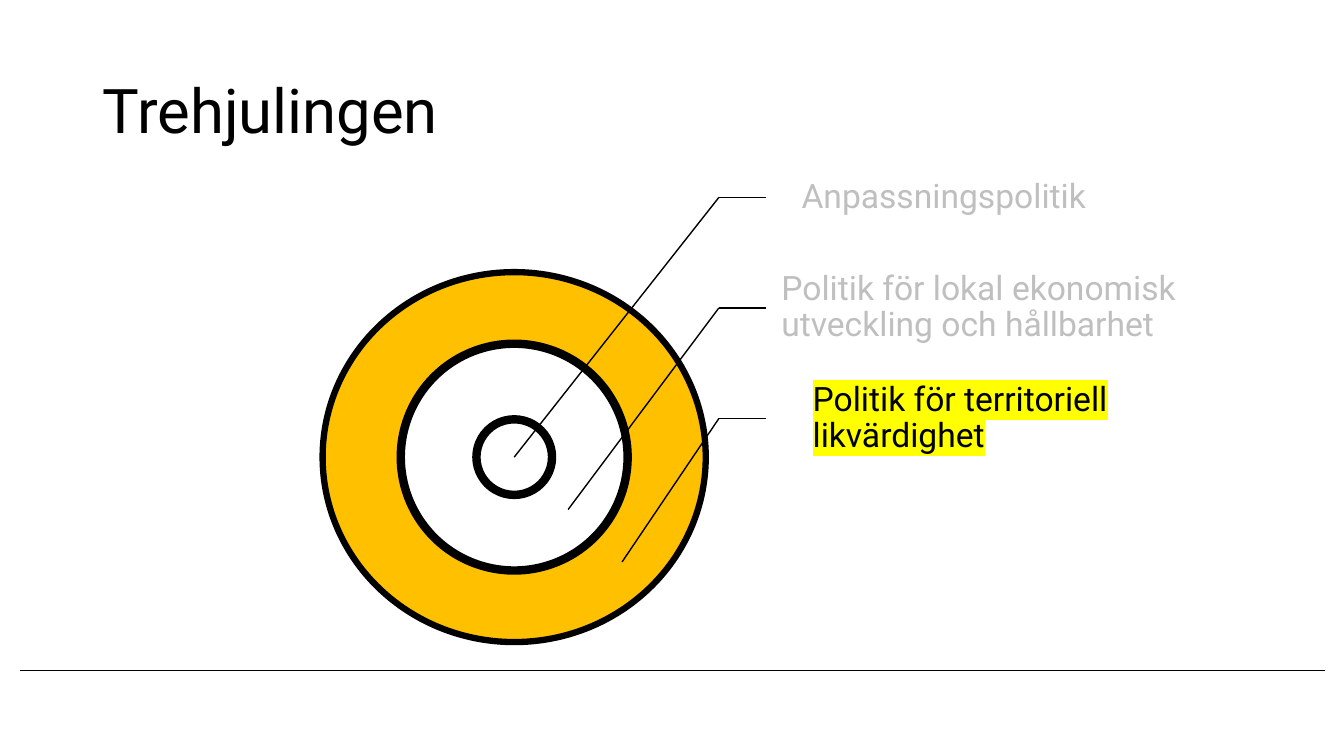
from lxml import etree
from pptx import Presentation
from pptx.dml.color import RGBColor
from pptx.enum.shapes import MSO_CONNECTOR, MSO_SHAPE
from pptx.enum.text import MSO_ANCHOR
from pptx.oxml.ns import qn
from pptx.util import Inches, Pt

OVAL = MSO_SHAPE.OVAL
STRAIGHT = MSO_CONNECTOR.STRAIGHT
MIDDLE = MSO_ANCHOR.MIDDLE
SLIDE_W, SLIDE_H = 13.33, 7.5
FONT = "Roboto"
BLACK, WHITE, AMBER, GREY, YELLOW = "000000", "FFFFFF", "FFC000", "BFBFBF", "FFFF00"


def color(hex_code):
    """Turn a hex string into a colour."""
    return RGBColor.from_string(hex_code)


def add_line(slide, start, end, width):
    """Draw a plain black line between two points."""
    line = slide.shapes.add_connector(STRAIGHT, *map(Inches, (*start, *end)))
    line.line.color.rgb = color(BLACK)
    line.line.width = Pt(width)
    etree.SubElement(line._element.spPr, qn("a:effectLst"))


def add_text(slide, box, wording, size, ink, insets, space_after=0, highlight=None):
    """Write one vertically centred paragraph in the box."""
    frame = slide.shapes.add_textbox(*map(Inches, box)).text_frame
    frame.word_wrap = True
    frame.vertical_anchor = MIDDLE
    frame.margin_left, frame.margin_top, frame.margin_right, frame.margin_bottom = map(Inches, insets)
    paragraph = frame.paragraphs[0]
    paragraph.line_spacing = 0.9
    paragraph.space_after = Pt(space_after)
    run = paragraph.add_run()
    run.text = wording
    run.font.size = Pt(size)
    run.font.color.rgb = color(ink)
    if highlight:
        marker = etree.SubElement(run.font._element, qn("a:highlight"))
        etree.SubElement(marker, qn("a:srgbClr")).set("val", highlight)
    run.font.name = FONT


def add_title(slide, box):
    """Place the slide heading."""
    add_text(slide, box, "Trehjulingen", 44, BLACK, (0.1, 0.05, 0.1, 0.05))


def add_wheel(slide, box):
    """Draw three concentric rings centred in the box."""
    left, top, width, height = box
    center_x, center_y = left + width / 2, top + height / 2
    rings = [(width, height, AMBER, 4.5), (2.25, 2.25, WHITE, 6), (0.75, 0.75, WHITE, 6)]
    for ring_w, ring_h, fill, outline in rings:
        ring = slide.shapes.add_shape(
            OVAL, *map(Inches, (center_x - ring_w / 2, center_y - ring_h / 2, ring_w, ring_h)))
        ring.shadow.inherit = False
        ring.fill.solid()
        ring.fill.fore_color.rgb = color(fill)
        ring.line.color.rgb = color(BLACK)
        ring.line.width = Pt(outline)


def add_callouts(slide, box, wheel_center):
    """Stack the labels in the box and lead each one to its ring."""
    left, top, width, height = box
    row = height / 3
    center_x, center_y = wheel_center
    labels = [
        ("Anpassningspolitik", 0.63, 3.8, GREY, None),
        ("Politik för lokal ekonomisk utveckling och hållbarhet", 0.43, 4.54, GREY, None),
        ("Politik för territoriell likvärdighet", 0.74, 3.17, BLACK, YELLOW),
    ]
    for index, (wording, indent, label_w, ink, highlight) in enumerate(labels):
        middle = top + row * (index + 0.5)
        add_text(slide, (left + indent, middle - 0.58, label_w, 1.16), wording, 24, ink,
                 (0.19, 0.03, 0.03, 0.03), 8.4, highlight)
        elbow = (left, middle)
        add_line(slide, elbow, (left + 0.47, middle), 1)
        add_line(slide, elbow, (center_x + 0.535 * index, center_y + 0.52 * index), 1)


def build_slide(slide):
    """Lay out the heading, the wheel, its callouts and the footer rule."""
    wheel = (3.2, 2.7, 3.8, 3.67)
    left, top, width, height = wheel
    add_line(slide, (0.2, 6.65), (SLIDE_W - 0.19, 6.65), 0.5)
    add_title(slide, (0.92, 0.4, 11.5, 1.45))
    add_wheel(slide, wheel)
    add_callouts(slide, (7.13, 1.41, 5, 3.29), (left + width / 2, top + height / 2))


def main():
    """Create and save the presentation."""
    presentation = Presentation()
    presentation.slide_width, presentation.slide_height = Inches(SLIDE_W), Inches(SLIDE_H)
    build_slide(presentation.slides.add_slide(presentation.slide_layouts[6]))
    presentation.save("out.pptx")


if __name__ == "__main__":
    main()
